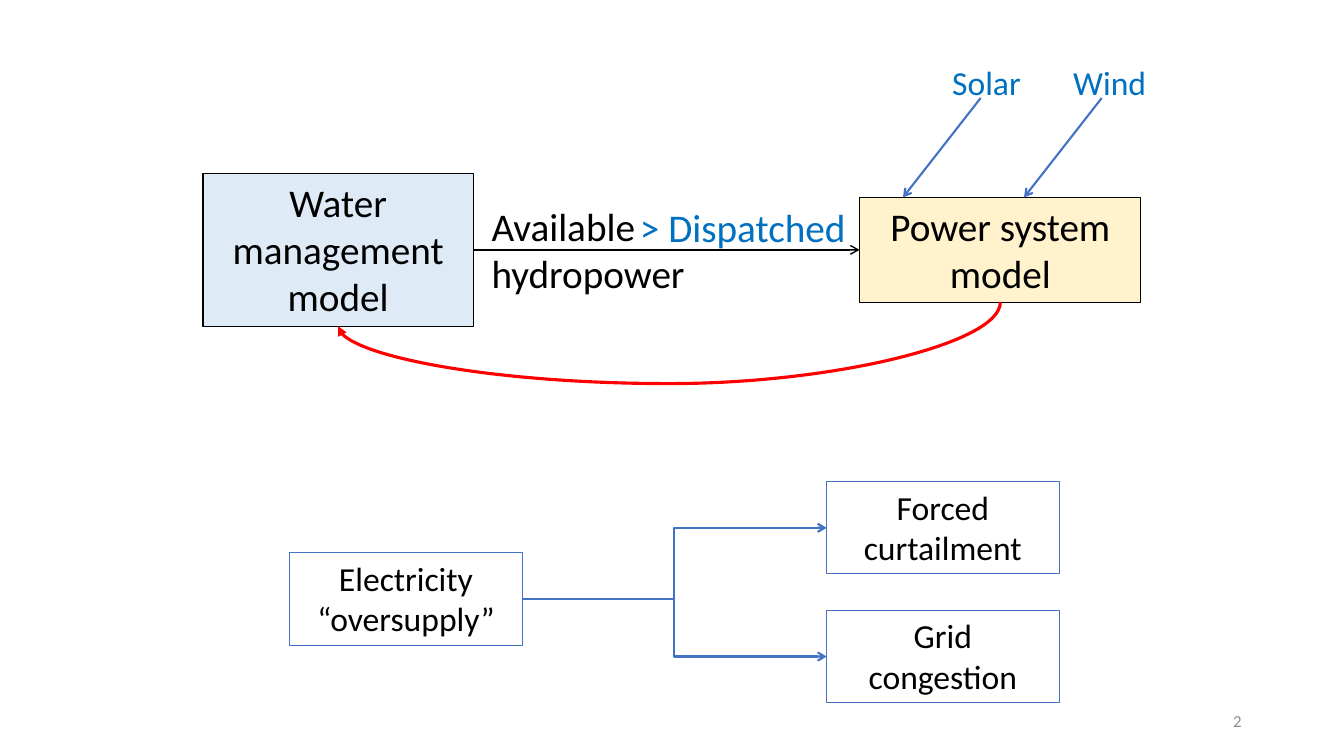
import lxml.etree
import pptx
import pptx.dml.color
import pptx.enum.shapes
import pptx.enum.text
import pptx.oxml.ns
import pptx.util

Pt = pptx.util.Pt
qn = pptx.oxml.ns.qn
ALIGN = pptx.enum.text.PP_ALIGN
ANCHOR = pptx.enum.text.MSO_ANCHOR
KIND = pptx.enum.shapes.MSO_CONNECTOR

# Content: lengths in points
FONT = "Calibri"
COLORS = {
    "black": "000000", "water": "DEEBF7", "power": "FFF2CC",
    "blue": "4472C4", "label": "0070C0", "feedback": "FF0000", "grey": "8C8C8C",
}
SMALL_W, SMALL_H, EFFECT_LEFT = 166, 66, 590.5
BOXES = {  # text, (left, top, width, height), size, fill, outline
    "water": ("Water management model", (145, 124, 193, 109), 28, "water", "black"),
    "power": ("Power system model", (614, 141, 201, 75), 28, "power", "black"),
    "oversupply": ("Electricity “oversupply”", (207, 395, SMALL_W, SMALL_H), 24, None, "blue"),
    "curtailment": ("Forced curtailment", (EFFECT_LEFT, 344, SMALL_W, SMALL_H), 24, None, "blue"),
    "congestion": ("Grid congestion", (EFFECT_LEFT, 436, SMALL_W, SMALL_H), 24, None, "blue"),
}
LABELS = [  # text, (left, top, width, height), size, colour
    ("Available hydropower", (344, 141, 168, 75), 28, "black"),
    ("> Dispatched", (450, 142, 168, 41), 28, "label"),
]
SOURCES = ["Solar", "Wind"]
SOURCE_LEFT, SOURCE_TOP, SOURCE_STEP = 673, 40.5, 86.5
LINKS = [  # kind, from, to, colour, width
    (KIND.STRAIGHT, "water", "power", "black", 1),
    (KIND.ELBOW, "oversupply", "curtailment", "blue", 1.5),
    (KIND.ELBOW, "oversupply", "congestion", "blue", 1.5),
]
FEEDBACK_DEPTH = 58
LEFT_SITE, RIGHT_SITE = 1, 3

prs = pptx.Presentation()
prs.slide_width, prs.slide_height = Pt(960), Pt(540)
s = prs.slides.add_slide(prs.slide_layouts[6])


def rgb(name):
    return pptx.dml.color.RGBColor.from_string(COLORS[name])


def write(sp, text, size, color, align=ALIGN.LEFT):
    tf = sp.text_frame
    tf.word_wrap = True
    tf.auto_size = pptx.enum.text.MSO_AUTO_SIZE.SHAPE_TO_FIT_TEXT
    tf.vertical_anchor = ANCHOR.TOP
    p = tf.paragraphs[0]
    p.alignment = align
    r = p.add_run()
    r.text = text
    r.font.name, r.font.size = FONT, Pt(size)
    r.font.color.rgb = rgb(color)
    return tf


def add_label(text, place, size, color, align=ALIGN.LEFT):
    sp = s.shapes.add_textbox(*map(Pt, place))
    return write(sp, text, size, color, align)


def add_box(text, place, size, fill, outline):
    sp = s.shapes.add_shape(pptx.enum.shapes.MSO_SHAPE.RECTANGLE, *map(Pt, place))
    sp.shadow.inherit = False
    if fill:
        sp.fill.solid()
        sp.fill.fore_color.rgb = rgb(fill)
    else:
        sp.fill.background()
    sp.line.color.rgb = rgb(outline)
    sp.line.width = Pt(0.75)
    write(sp, text, size, "black", ALIGN.CENTER)
    return sp


def add_arrow(kind, ends, color, width, head="arrow"):
    c = s.shapes.add_connector(kind, *map(Pt, ends))
    c.line.color.rgb = rgb(color)
    c.line.width = Pt(width)
    props = c.element.spPr
    lxml.etree.SubElement(props.find(qn("a:ln")), qn("a:tailEnd"), type=head)
    lxml.etree.SubElement(props, qn("a:effectLst"))
    return c


# Boxes
boxes = {name: add_box(*box) for name, box in BOXES.items()}

# Links between boxes, right side to left side
for kind, start, end, color, width in LINKS:
    c = add_arrow(kind, (0, 0, 0, 0), color, width)
    c.begin_connect(boxes[start], RIGHT_SITE)
    c.end_connect(boxes[end], LEFT_SITE)

# Feedback curve, bottom of power to bottom of water: drawn upright, turned 90 degrees
(wx, wy, ww, wh), (px, py, pw, ph) = BOXES["water"][1], BOXES["power"][1]
x1, y1, x2, y2 = px + pw / 2, py + ph, wx + ww / 2, wy + wh
mid_x, mid_y = (x1 + x2) / 2, (y1 + y2) / 2
drop, span = y2 - y1, x1 - x2
c = add_arrow(KIND.CURVE, (mid_x - drop / 2, mid_y - span / 2,
                           mid_x + drop / 2, mid_y + span / 2),
              "feedback", 2.25, "triangle")
c.element.spPr.find(qn("a:xfrm")).set("rot", str(90 * 60000))
geometry = c.element.spPr.find(qn("a:prstGeom"))
guides = geometry.find(qn("a:avLst"))
if guides is None:
    guides = lxml.etree.SubElement(geometry, qn("a:avLst"))
lxml.etree.SubElement(guides, qn("a:gd"), name="adj1",
                      fmla=f"val {round(FEEDBACK_DEPTH / drop * 100000)}")

# Renewable sources feeding the power system
for i, source in enumerate(SOURCES):
    left = SOURCE_LEFT + i * SOURCE_STEP
    add_arrow(KIND.STRAIGHT, (left + 27.5, 70, left - 28, py), "blue", 1.5)
    add_label(source, (left, SOURCE_TOP, 73, 36), 24, "label")

# Labels and slide number
for label in LABELS:
    add_label(*label)
tf = add_label("2", (678, 500.5, 216, 29), 12, "grey", ALIGN.RIGHT)
tf.auto_size = pptx.enum.text.MSO_AUTO_SIZE.NONE
tf.vertical_anchor = ANCHOR.MIDDLE

prs.save("out.pptx")
